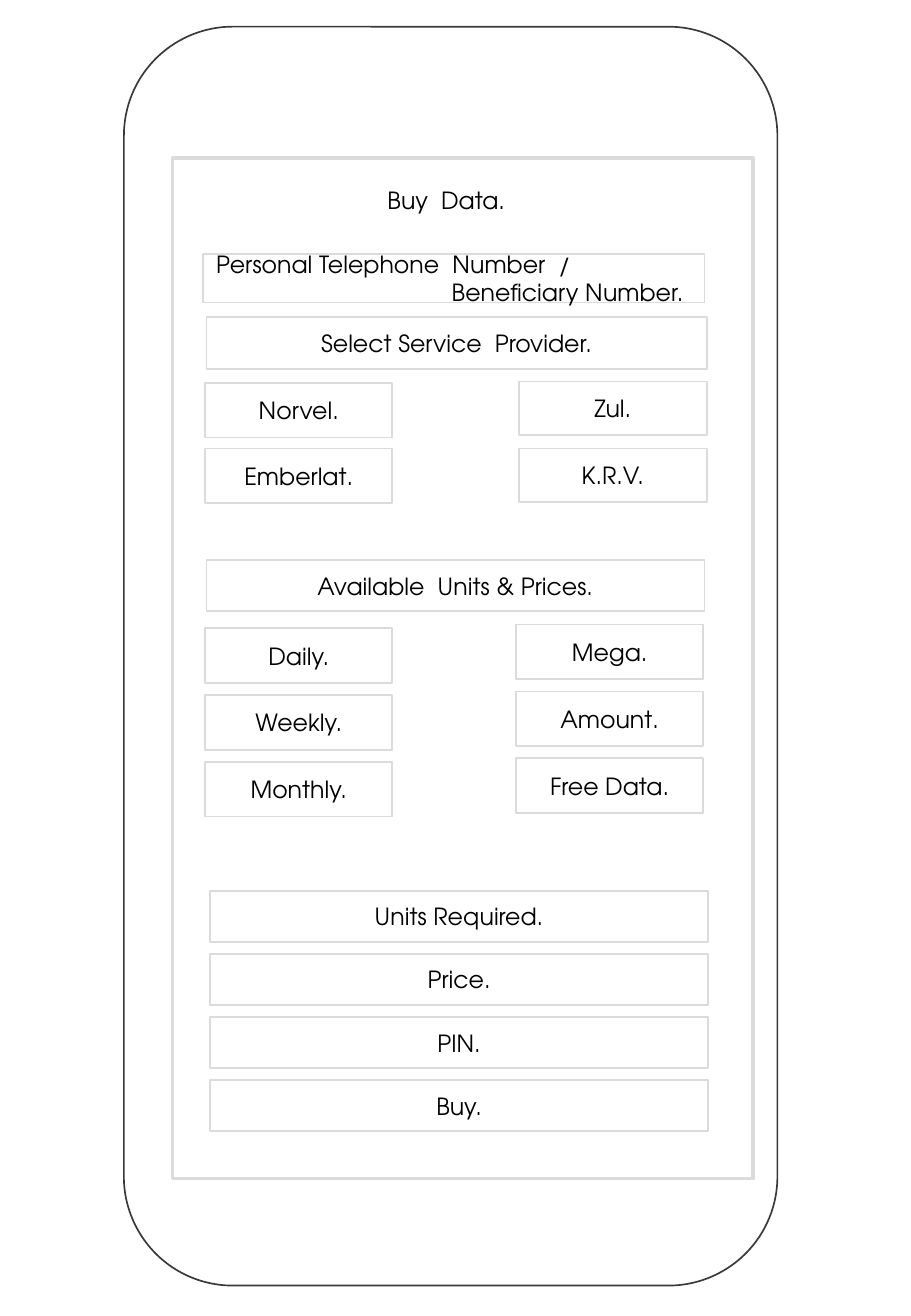
from pptx import Presentation
from pptx.dml.color import RGBColor
from pptx.enum.shapes import MSO_SHAPE as Shape
from pptx.enum.text import MSO_ANCHOR as Anchor, PP_ALIGN as Align
from pptx.util import Inches, Pt

FONT = "TeX Gyre Adventor"
WHITE, BLACK, GREY, CHARCOAL = "FFFFFF", "000000", "DBDBDB", "3B3838"


def colour(value):
    return RGBColor.from_string(value)


def add_panel(page, box, line=GREY, weight=1, kind=Shape.RECTANGLE):
    panel = page.shapes.add_shape(kind, *[Inches(length) for length in box])
    panel.shadow.inherit = False
    panel.fill.solid()
    panel.fill.fore_color.rgb = colour(WHITE)
    if line:
        panel.line.color.rgb = colour(line)
        panel.line.width = Pt(weight)
    else:
        panel.line.fill.background()
    return panel


def add_label(page, box, text, line=GREY, aligns=(Align.CENTER,)):
    """Add a box with one paragraph for each alignment."""
    label = add_panel(page, box, line)
    frame = label.text_frame
    frame.text = text
    frame.word_wrap = True
    frame.vertical_anchor = Anchor.MIDDLE
    frame.margin_top = frame.margin_bottom = 0
    for para, align in zip(frame.paragraphs, aligns):
        para.alignment = align
        for span in para.runs:
            span.font.name = FONT
            span.font.size = Pt(14)
            span.font.color.rgb = colour(BLACK)
    return label


def add_stack(page, box, step, texts):
    """Repeat the given box downwards, one for each text."""
    left, top, width, height = box
    for row, text in enumerate(texts):
        add_label(page, (left, top + row * step, width, height), text)


def add_phone(page, box):
    left, top, width, height = box
    add_panel(page, box, CHARCOAL, kind=Shape.ROUNDED_RECTANGLE)
    screen = (left + 0.4, top + 1.08, width - 0.6, height - 1.96)
    add_panel(page, screen, weight=2.25)
    return screen


def add_header(page, box):
    left, top, _, _ = box
    add_label(page, (left + 0.19, top + 0.15, 4.13, 0.4), "Buy  Data.", line=None)
    number = add_label(page, (left + 0.25, top + 0.79, 4.13, 0.4),
                       "Personal Telephone  Number  /\nBeneficiary Number.",
                       aligns=(Align.LEFT, Align.RIGHT))
    number.text_frame.margin_left = Inches(0.11)
    number.text_frame.margin_right = Inches(0.17)


def add_providers(page, box):
    left, top, _, _ = box
    add_label(page, (left + 0.28, top + 1.31, 4.12, 0.43), "Select Service  Provider.")
    add_stack(page, (left + 0.27, top + 1.85, 1.54, 0.45), 0.54, ["Norvel.", "Emberlat."])
    add_stack(page, (left + 2.85, top + 1.84, 1.55, 0.44), 0.55, ["Zul.", "K.R.V."])


def add_plans(page, box):
    left, top, _, _ = box
    add_label(page, (left + 0.28, top + 3.31, 4.1, 0.42), "Available  Units & Prices.")
    add_stack(page, (left + 0.27, top + 3.87, 1.54, 0.45), 0.55,
              ["Daily.", "Weekly.", "Monthly."])
    add_stack(page, (left + 2.83, top + 3.84, 1.54, 0.45), 0.55,
              ["Mega.", "Amount.", "Free Data."])


def add_order(page, box):
    left, top, _, _ = box
    add_stack(page, (left + 0.31, top + 6.03, 4.1, 0.42), 0.52,
              ["Units Required.", "Price.", "PIN.", "Buy."])


def main():
    deck = Presentation()
    deck.slide_width, deck.slide_height = Inches(7.5), Inches(10.83)
    page = deck.slides.add_slide(deck.slide_layouts[6])

    # Phone body and screen
    screen = add_phone(page, (1.02, 0.22, 5.38, 10.36))

    # Form sections, from top to bottom
    for add_section in (add_header, add_providers, add_plans, add_order):
        add_section(page, screen)

    deck.save("out.pptx")


if __name__ == "__main__":
    main()
